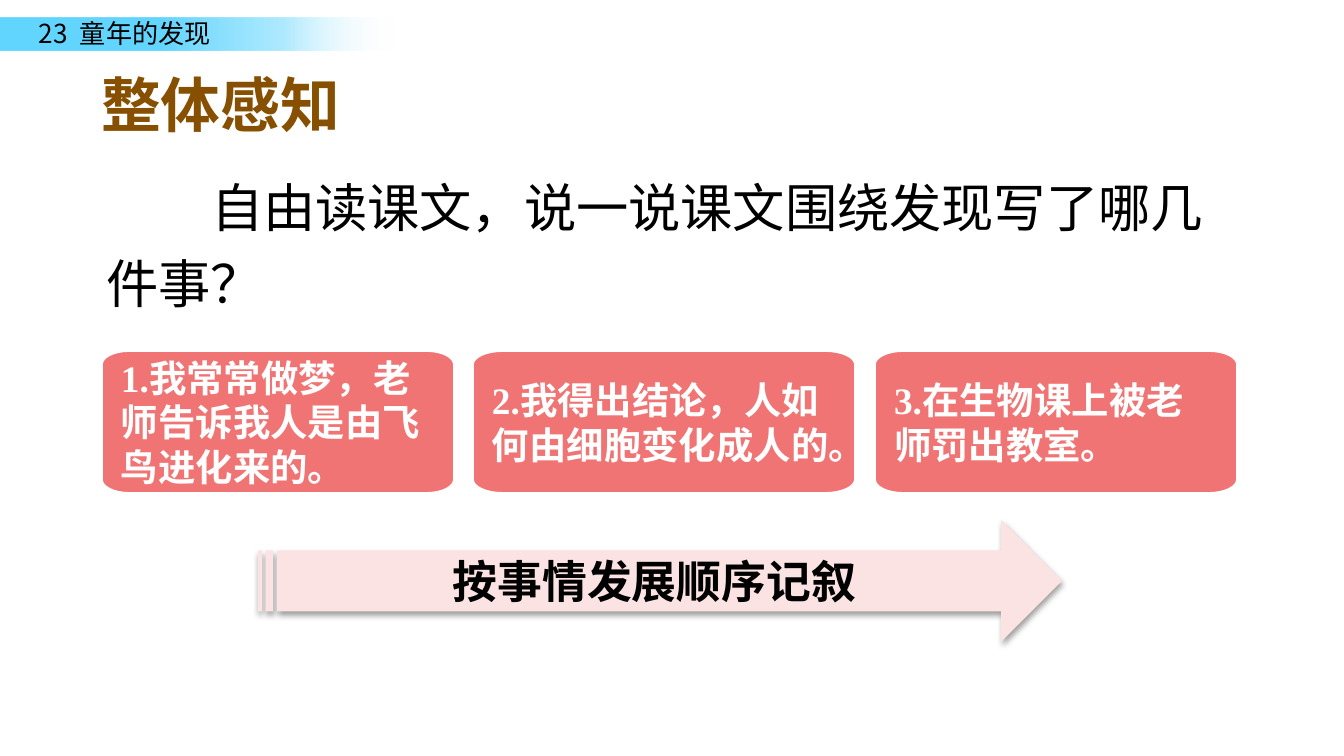
import math

from lxml import etree
from pptx import Presentation
from pptx.dml.color import RGBColor
from pptx.enum.shapes import MSO_SHAPE
from pptx.enum.text import MSO_ANCHOR, PP_ALIGN
from pptx.oxml.ns import qn
from pptx.util import Emu, Pt

PX = 914400 / 134.4
RECTANGLE = MSO_SHAPE.RECTANGLE
STRIPED_ARROW = MSO_SHAPE.STRIPED_RIGHT_ARROW
TOP, MIDDLE = MSO_ANCHOR.TOP, MSO_ANCHOR.MIDDLE
LEFT, CENTER = PP_ALIGN.LEFT, PP_ALIGN.CENTER
CJK = "Noto Sans CJK SC"
EVENTS = [
    (101, 354, "1.我常常做梦，老师告诉我人是由飞鸟进化来的。"),
    (472, 384, "2.我得出结论，人如何由细胞变化成人的。"),
    (874, 364, "3.在生物课上被老师罚出教室。"),
]


def px(length):
    """Turn pixels into EMU."""
    return Emu(round(length * PX))


def color(value):
    """Turn a hex string into a colour."""
    return RGBColor.from_string(value)


def add_color(parent, value, alpha):
    """Append a hex colour with an opacity in percent."""
    tint = etree.SubElement(parent, qn("a:srgbClr"), val=value)
    etree.SubElement(tint, qn("a:alpha"), val=str(alpha * 1000))


def write(shape, text, size, fill="000000", font=CJK, bold=False, align=LEFT,
          anchor=TOP, insets=(13, 7), indent=0, spacing=1.0, wrap=True):
    """Write one formatted paragraph into a shape."""
    frame = shape.text_frame
    frame.word_wrap = wrap
    frame.vertical_anchor = anchor
    frame.margin_left = frame.margin_right = px(insets[0])
    frame.margin_top = frame.margin_bottom = px(insets[1])
    paragraph = frame.paragraphs[0]
    paragraph.alignment = align
    paragraph.line_spacing = spacing
    paragraph.space_before = Pt(0)
    if indent:
        paragraph._p.get_or_add_pPr().set("indent", str(px(indent)))
    run = paragraph.add_run()
    run.text = text
    run.font.size = Pt(size)
    run.font.bold = bold
    run.font.name = font
    run.font.color.rgb = color(fill)
    etree.SubElement(run._r.get_or_add_rPr(), qn("a:ea"), typeface=CJK)


def add_text(slide, box, text, size, **style):
    """Add a text box in a pixel box."""
    write(slide.shapes.add_textbox(*map(px, box)), text, size, **style)


def add_lesson_header(slide, x, y, width, height):
    """Draw the fading lesson band and its label."""
    band = slide.shapes.add_shape(RECTANGLE, *map(px, (x, y, width, height)))
    band.shadow.inherit = False
    band.line.fill.background()
    band.fill.gradient()
    band.fill.gradient_angle = 0
    stops = band._element.spPr.find(".//" + qn("a:gsLst"))
    for stop in list(stops):
        stops.remove(stop)
    for position, value, alpha in ((40, "63D6FF", 100), (70, "97E4FF", 76), (97, "FFFFFF", 0)):
        stop = etree.SubElement(stops, qn("a:gs"), pos=str(position * 1000))
        add_color(stop, value, alpha)
    add_text(slide, (x + 26, y - 8, 212, 46), "23  童年的发现", 14, wrap=False)


def add_title(slide, x, y, width, height):
    """Place the section title."""
    title = slide.shapes.title
    title.left, title.top, title.width, title.height = map(px, (x, y, width, height))
    write(title, "整体感知", 32, fill="875000", font="Arial", bold=True, insets=(9, 5))


def add_event_card(slide, x, y, width, height, text):
    """Draw one event card with elliptical corners."""
    rx, ry = width * 0.08, height * 0.1
    corners = ((width - rx, height - ry), (rx, height - ry), (rx, ry), (width - rx, ry))
    points = []
    for quarter, (cx, cy) in enumerate(corners):
        for step in range(9):
            angle = math.radians(quarter * 90 + step * 11.25)
            points.append((px(x + cx + rx * math.cos(angle)), px(y + cy + ry * math.sin(angle))))
    builder = slide.shapes.build_freeform(*points[0])
    builder.add_line_segments(points[1:], close=True)
    card = builder.convert_to_shape()
    card.shadow.inherit = False
    card.fill.solid()
    card.fill.fore_color.rgb = color("F07474")
    card.line.color.rgb = color("FFFFFF")
    card.line.width = Pt(2)
    write(card, text, 20, fill="FFFFFF", font="Times New Roman", bold=True,
          anchor=MIDDLE, insets=(20, 20))


def add_order_arrow(slide, x, y, width, height):
    """Draw the shadowed arrow naming the order of events."""
    arrow = slide.shapes.add_shape(STRIPED_ARROW, *map(px, (x, y, width, height)))
    arrow.shadow.inherit = False
    arrow.fill.solid()
    arrow.fill.fore_color.rgb = color("FCE3E3")
    arrow.line.fill.background()
    effects = arrow._element.spPr.find(qn("a:effectLst"))
    shadow = etree.SubElement(effects, qn("a:outerShdw"), blurRad=str(Pt(3.1)),
                              dist=str(Pt(1.6)), dir="5400000", rotWithShape="0")
    add_color(shadow, "000000", 38)
    write(arrow, "按事情发展顺序记叙", 24, bold=True, align=CENTER, anchor=MIDDLE)


def main():
    """Build and save the slide."""
    deck = Presentation()
    deck.slide_width, deck.slide_height = px(1344), px(756)
    slide = deck.slides.add_slide(deck.slide_layouts[5])
    add_lesson_header(slide, 0, 18, 407, 32)
    add_title(slide, 92, 63, 316, 82)
    add_text(slide, (93, 156, 1134, 156), "自由读课文，说一说课文围绕发现写了哪几件事？",
             28, indent=105, spacing=1.2)
    for x, width, text in EVENTS:
        add_event_card(slide, x, 350, width, 144, text)
    add_order_arrow(slide, 258, 520, 804, 122)
    deck.save("out.pptx")


if __name__ == "__main__":
    main()
